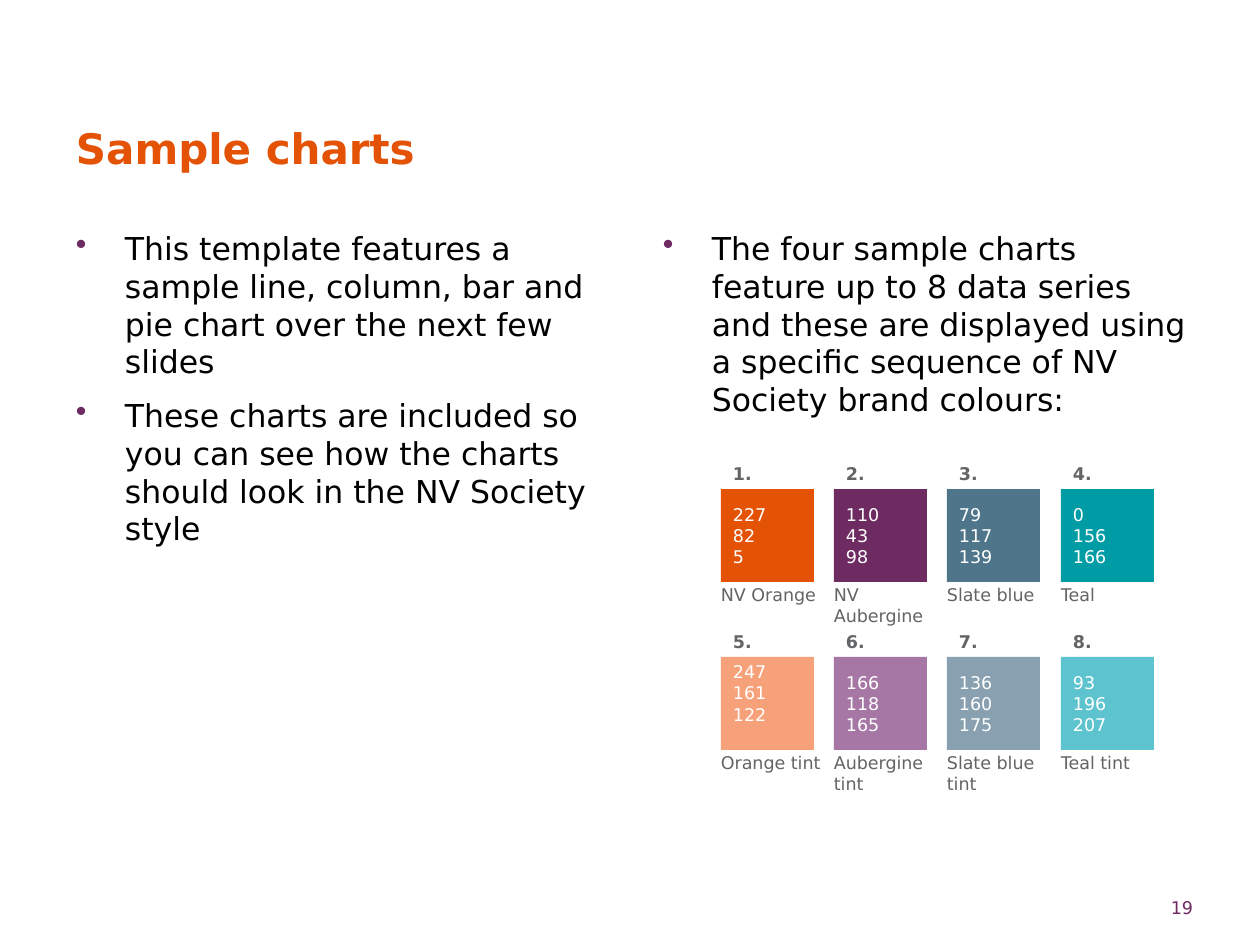
from pptx import Presentation
from pptx.dml.color import RGBColor
from pptx.enum.shapes import MSO_SHAPE as Shape
from pptx.enum.text import MSO_ANCHOR as Anchor, PP_ALIGN as Align
from pptx.oxml.ns import qn
from pptx.util import Pt
from lxml.etree import SubElement

PX = 914400 / 126
FONT = "DejaVu Sans"
ORANGE, AUBERGINE, GREY, BLACK, WHITE = "E35205", "6E2B62", "636466", "000000", "FFFFFF"

TITLE = "Sample charts"
PAGE_NUMBER = "19"
COLUMNS = [
    (76, [
        "This template features a sample line, column, bar and pie chart over the next few slides",
        "These charts are included so you can see how the charts should look in the NV Society style",
    ]),
    (663, [
        "The four sample charts feature up to 8 data series and these are displayed using "
        "a specific sequence of NV Society brand colours:",
    ]),
]
SWATCHES = [
    ("NV Orange", (227, 82, 5)),
    ("NV Aubergine", (110, 43, 98)),
    ("Slate blue", (79, 117, 139)),
    ("Teal", (0, 156, 166)),
    ("Orange tint", (247, 161, 122)),
    ("Aubergine tint", (166, 118, 165)),
    ("Slate blue tint", (136, 160, 175)),
    ("Teal tint", (93, 196, 207)),
]
RAISED = "Orange tint"
PER_ROW, GRID_LEFT, GRID_TOP, ROW_STEP, SIDE = 4, 721, 489, 168, 93


def px(value):
    return round(value * PX)


def colour(value):
    return RGBColor.from_string(value)


def write(shape, lines, size, ink, bold=False, insets=(0, 0, 0, 0), after=0):
    frame = shape.text_frame
    frame.word_wrap = True
    frame.margin_left, frame.margin_top, frame.margin_right, frame.margin_bottom = map(px, insets)
    frame.text = "\n".join(lines)
    for para in frame.paragraphs:
        para.alignment = Align.LEFT
        para.space_after = Pt(after)
        for span in para.runs:
            font = span.font
            font.name, font.size, font.bold = FONT, Pt(size), bold
            font.color.rgb = colour(ink)
    return frame


def add_text(page, at, lines, *style, **options):
    box = page.shapes.add_textbox(*map(px, at))
    return write(box, lines, *style, **options)


def add_bullet(para):
    props = para._p.get_or_add_pPr()
    props.set("marL", str(px(49)))
    props.set("indent", str(px(-49)))
    tint = SubElement(props, qn("a:buClr"))
    SubElement(tint, qn("a:srgbClr"), val=AUBERGINE)
    SubElement(props, qn("a:buChar"), char="•")


def add_swatch(page, index, name, rgb):
    row, col = divmod(index, PER_ROW)
    left = GRID_LEFT + col * 340 // 3
    top = GRID_TOP + row * ROW_STEP

    square = page.shapes.add_shape(Shape.RECTANGLE, *map(px, (left, top, SIDE, SIDE)))
    square.shadow.inherit = False
    square.fill.solid()
    square.fill.fore_color.rgb = RGBColor(*rgb)
    square.line.fill.background()
    bottom = 27 if name == RAISED else 6
    frame = write(square, map(str, rgb), 10, WHITE, insets=(12, 6, 12, bottom))
    frame.vertical_anchor = Anchor.MIDDLE

    add_text(page, (left, top - 32, 58, 32), [f"{index + 1}."], 10, GREY,
             bold=True, insets=(12, 6, 12, 6), after=6)
    add_text(page, (left, top + 89, 113, 44), [name], 10, GREY,
             insets=(0, 6, 11, 6), after=6)


def main():
    deck = Presentation()
    deck.slide_width, deck.slide_height = px(1260), px(945)
    page = deck.slides.add_slide(deck.slide_layouts[6])

    title = add_text(page, (76, 120, 1119, 63), [TITLE], 24, ORANGE, bold=True)
    title.paragraphs[0].line_spacing = Pt(30)

    for left, lines in COLUMNS:
        body = add_text(page, (left, 229, 530, 645), lines, 18, BLACK, after=9)
        for para in body.paragraphs:
            add_bullet(para)

    for index, (name, rgb) in enumerate(SWATCHES):
        add_swatch(page, index, name, rgb)

    number = add_text(page, (1124, 897, 69, 29), [PAGE_NUMBER], 10, AUBERGINE)
    number.paragraphs[0].alignment = Align.RIGHT

    deck.save("out.pptx")


if __name__ == "__main__":
    main()
